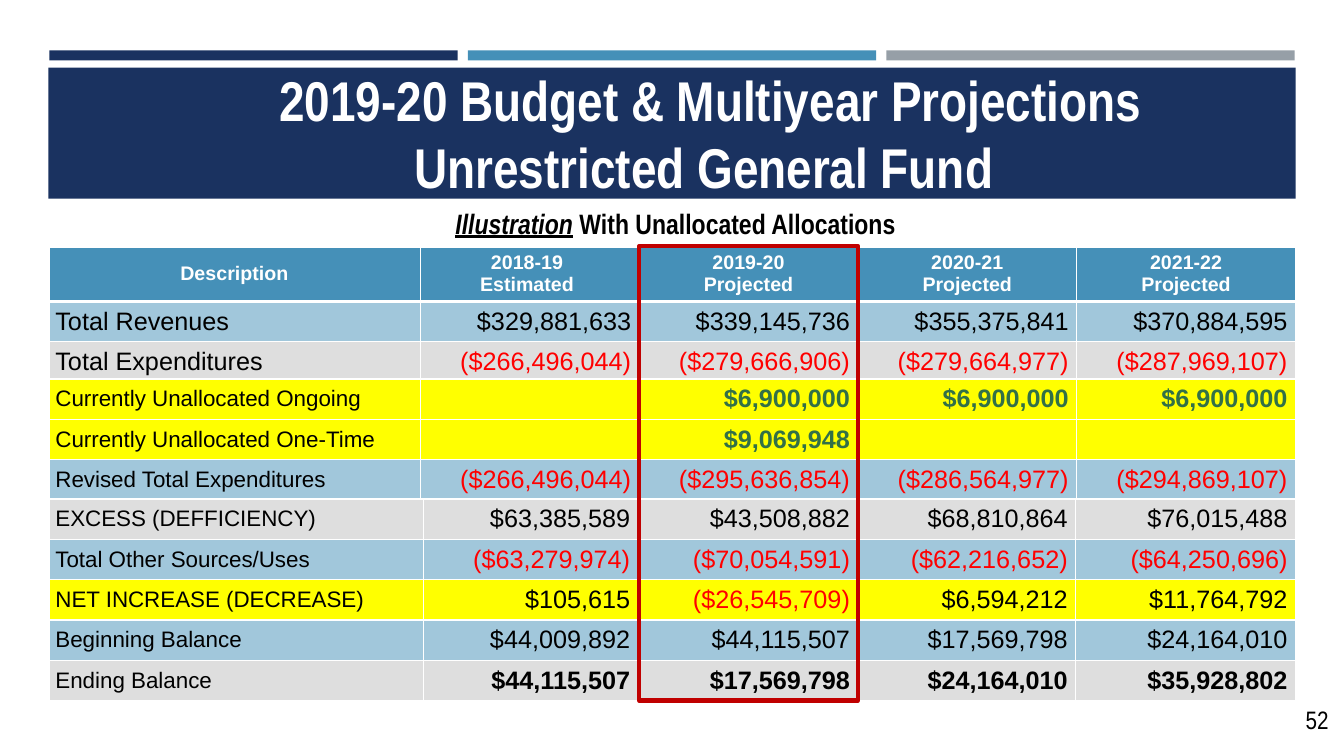
import pptx
import pptx.dml.color
import pptx.enum.shapes
import pptx.enum.text
import pptx.oxml
import pptx.oxml.ns
import pptx.util

THEME = {
    "navy": "1A3260", "blue": "4590B8", "gray": "969FA7", "silver": "BFBFBF",
    "yellow": "FFFF00", "white": "FFFFFF", "black": "000000", "red": "FF0000",
    "green": "327047", "crimson": "C00000",
    "body": "Arial", "narrow": "Arial Narrow",
    "title": 40, "subtitle": 20, "figure": 18, "label": 16, "header": 14,
}
ALIGN = pptx.enum.text.PP_ALIGN
MIDDLE = pptx.enum.text.MSO_ANCHOR.MIDDLE
RECTANGLE = pptx.enum.shapes.MSO_SHAPE.RECTANGLE
inch = pptx.util.Inches

ROW = 0.4
YEAR = 2.17
LABEL = 3.69
LEFT = 0.48
SPAN = LABEL + 4 * YEAR
TABLE_TOP = 2.44
TABLE_BOTTOM = 6.95
BAR_GAP = 0.1
BAR = (SPAN - 0.02 - 2 * BAR_GAP) / 3


def color(name):
    return pptx.dml.color.RGBColor.from_string(THEME[name])


def style(paragraph, size, ink, font="body", bold=False, align=ALIGN.LEFT):
    paragraph.alignment = align
    for run in paragraph.runs:
        run.font.size = pptx.util.Pt(THEME[size])
        run.font.name = THEME[font]
        run.font.bold = bold
        run.font.color.rgb = color(ink)


deck = pptx.Presentation()
deck.slide_width, deck.slide_height = inch(13.33), inch(7.5)
slide = deck.slides.add_slide(deck.slide_layouts[6])

bands = [(LEFT + 0.01 + i * (BAR + BAR_GAP), 0.5, BAR, 0.1, fill)
         for i, fill in enumerate(["navy", "blue", "gray"])]
bands.append((LEFT, 0.67, SPAN, 1.3, "navy"))
for *bounds, fill in bands:
    band = slide.shapes.add_shape(RECTANGLE, *map(inch, bounds))
    band.shadow.inherit = False
    band.fill.solid()
    band.fill.fore_color.rgb = color(fill)
    band.line.fill.background()

title = slide.shapes.add_textbox(*map(inch, (2.3, 0.77, 9.49, 1.09))).text_frame
title.word_wrap = True
title.vertical_anchor = MIDDLE
title.paragraphs[0].text = "2019-20 Budget & Multiyear Projections\nUnrestricted General Fund "
style(title.paragraphs[0], "title", "white", "narrow", True, ALIGN.CENTER)

even = [LABEL] + [YEAR] * 4
sections = [
    (TABLE_TOP, even, "figure", [
        ("header", "Description", "2018-19 \nEstimated ", "2019-20\nProjected",
         "2020-21\nProjected", "2021-22\nProjected"),
        ("blue", "Total Revenues", "$329,881,633", "$339,145,736", "$355,375,841", "$370,884,595"),
        ("silver", "Total Expenditures", "($266,496,044)", "($279,666,906)",
         "($279,664,977)", "($287,969,107)"),
    ]),
    (3.76, even, "label", [
        ("unallocated", "Currently Unallocated Ongoing", "", "$6,900,000", "$6,900,000", "$6,900,000"),
        ("unallocated", "Currently Unallocated One-Time", "", "$9,069,948", "", ""),
        ("blue", "Revised Total Expenditures", "($266,496,044)", "($295,636,854)",
         "($286,564,977)", "($294,869,107)"),
    ]),
    (TABLE_BOTTOM - 5 * ROW, [3.72, 2.13, 2.18, 2.16, 2.18], "label", [
        ("silver", "EXCESS (DEFFICIENCY)", "$63,385,589", "$43,508,882", "$68,810,864", "$76,015,488"),
        ("blue", "Total Other Sources/Uses", "($63,279,974)", "($70,054,591)",
         "($62,216,652)", "($64,250,696)"),
        ("yellow", "NET INCREASE (DECREASE)", "$105,615", "($26,545,709)", "$6,594,212", "$11,764,792"),
        ("blue", "Beginning Balance", "$44,009,892", "$44,115,507", "$17,569,798", "$24,164,010"),
        ("ending", "Ending Balance", "$44,115,507", "$17,569,798", "$24,164,010", "$35,928,802"),
    ]),
]
row_fills = {"header": "blue", "unallocated": "yellow", "ending": "silver"}

for top, widths, label_size, entries in sections:
    heights = [0.55 if entry[0] == "header" else ROW for entry in entries]
    table = slide.shapes.add_table(
        len(entries), len(widths), *map(inch, (LEFT, top, sum(widths), sum(heights)))).table
    table.horz_banding = False
    for column, width in zip(table.columns, widths):
        column.width = inch(width)
    for r, (kind, *texts) in enumerate(entries):
        table.rows[r].height = inch(heights[r])
        is_header = kind == "header"
        below_header = r > 0 and entries[r - 1][0] == "header"
        fill = row_fills.get(kind, kind)
        for c, text in enumerate(texts):
            cell = table.cell(r, c)
            cell.vertical_anchor = MIDDLE
            cell.margin_left = cell.margin_right = inch(0.08 if c and not is_header else 0.07)
            cell.margin_top = cell.margin_bottom = inch(0.04)
            cell.text_frame.text = text
            for paragraph in cell.text_frame.paragraphs:
                if is_header:
                    style(paragraph, "header", "white", bold=True, align=ALIGN.CENTER)
                elif c == 0:
                    style(paragraph, label_size, "black")
                else:
                    ink = ("green" if kind == "unallocated"
                           else "red" if text.startswith("(") else "black")
                    style(paragraph, "figure", ink, bold=kind in ("unallocated", "ending"),
                          align=ALIGN.RIGHT)
            cell.fill.solid()
            cell.fill.fore_color.rgb = color(fill)
            properties = cell._tc.get_or_add_tcPr()
            if fill != "yellow" and not is_header:
                tint = properties.find(".//" + pptx.oxml.ns.qn("a:srgbClr"))
                tint.append(pptx.oxml.parse_xml(
                    f'<a:alpha {pptx.oxml.ns.nsdecls("a")} val="50000"/>'))
            borders = {"L": 3 if c == 0 else 1, "R": 1,
                       "T": 3 if is_header or below_header else 1,
                       "B": 3 if is_header else 1}
            for position, (side, weight) in enumerate(borders.items()):
                properties.insert(position, pptx.oxml.parse_xml(
                    f'<a:ln{side} {pptx.oxml.ns.nsdecls("a")} w="{pptx.util.Pt(weight)}">'
                    f'<a:solidFill><a:srgbClr val="{THEME["white"]}"/></a:solidFill></a:ln{side}>'))

page = slide.shapes.add_textbox(*map(inch, (12.85, 6.94, 0.49, ROW))).text_frame
page.word_wrap = True
page.text = "52"
style(page.paragraphs[0], "figure", "black", "narrow")

subtitle = slide.shapes.add_textbox(*map(inch, (2.57, 2, 8.26, 0.44))).text_frame
subtitle.word_wrap = True
caption = subtitle.paragraphs[0]
for words, italic, underline in [("Illustration", True, True), (" ", True, False),
                                 ("With Unallocated Allocations", False, False)]:
    run = caption.add_run()
    run.text = words
    run.font.italic = italic
    run.font.underline = underline
style(caption, "subtitle", "black", "narrow", True, ALIGN.CENTER)

highlight = slide.shapes.add_shape(RECTANGLE, *map(inch, (
    LEFT + LABEL + YEAR, TABLE_TOP, YEAR, TABLE_BOTTOM - TABLE_TOP)))
highlight.shadow.inherit = False
highlight.fill.background()
highlight.line.color.rgb = color("crimson")
highlight.line.width = pptx.util.Pt(3)

deck.save("out.pptx")
